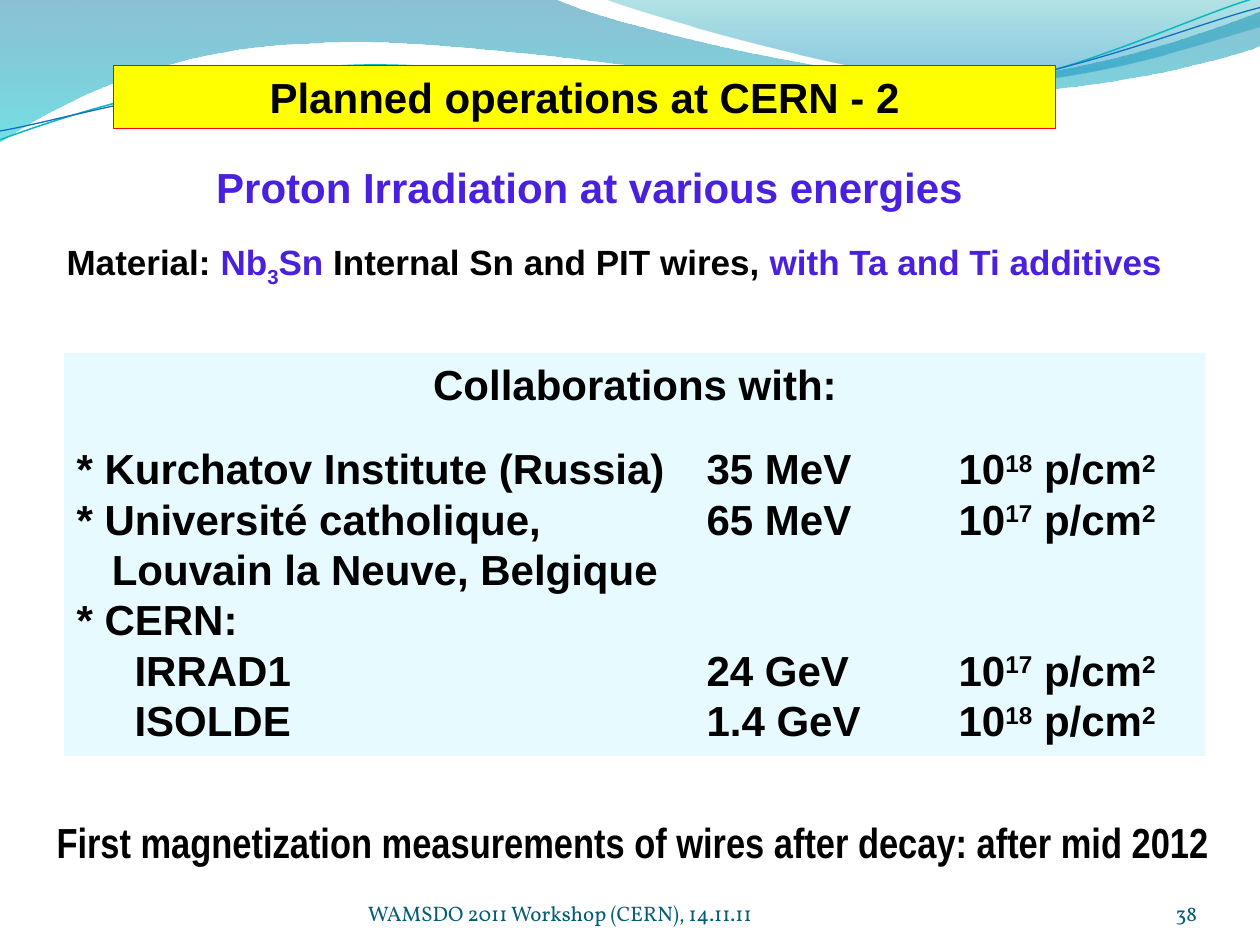
from dataclasses import dataclass

from lxml import etree
from pptx import Presentation
from pptx.dml.color import RGBColor
from pptx.enum.shapes import MSO_SHAPE
from pptx.enum.text import MSO_ANCHOR, PP_ALIGN
from pptx.oxml.ns import qn
from pptx.util import Inches, Pt

RECT = MSO_SHAPE.RECTANGLE
LEFT, CENTER, RIGHT = PP_ALIGN.LEFT, PP_ALIGN.CENTER, PP_ALIGN.RIGHT
TOP, BOTTOM = MSO_ANCHOR.TOP, MSO_ANCHOR.BOTTOM


@dataclass(frozen=True)
class Theme:
    """Colours, fonts and type sizes of the slide."""
    ink: str = "000000"
    accent: str = "4920DE"
    footer: str = "045D75"
    banner: str = "FFFF00"
    border: str = "FF0000"
    panel: str = "E7FAFF"
    body_font: str = "Arial"
    narrow_font: str = "Arial Narrow"
    footer_font: str = "Vollkorn"
    large: float = 24
    medium: float = 20
    small: float = 12
    leading: float = 28.8
    gap: float = 19


T = Theme()
WAVES = [
    dict(start=(0, 0), close=True,
         parts=[(4.4, -0.01), (4.76, 0.17, 6.64, 0.63, 7.58, 0.63),
                (8.53, 0.63, 9.58, 0.26, 10, 0.09), (10.01, 0.36),
                (9.83, 0.44, 8.7, 0.76, 7.46, 0.75),
                (6.22, 0.75, 3.82, 0.28, 2.57, 0.34),
                (1.29, 0.36, 0.46, 0.83, -0.01, 1.13)],
         stops=[(0, "0074A1", 45), (1, "00C6CF", 55)]),
    dict(start=(4.79, -0.01), close=True,
         parts=[(5.09, 0.11, 6.82, 0.62, 7.69, 0.65),
                (8.56, 0.69, 9.61, 0.32, 10, 0.21), (10, 0)],
         stops=[(0, "00A1A9", 30), (0.8, "008BBF", 45)]),
    dict(start=(0, 1.11), close=False,
         parts=[(0.48, 0.93, 1.58, 0.57, 2.77, 0.52),
                (3.95, 0.47, 5.93, 0.89, 7.13, 0.8),
                (8.33, 0.71, 9.38, 0.15, 9.98, -0.02)],
         line=("0AB8BF", 0.85)),
    dict(start=(0, 1.04), close=False,
         parts=[(0.47, 0.96, 1.64, 0.61, 2.83, 0.56),
                (4.03, 0.51, 5.97, 0.84, 7.17, 0.75),
                (8.36, 0.67, 9.41, 0.21, 10, 0.06)],
         line=("0F6FC6", 0.75)),
]
ROWS = [
    (0, "* Kurchatov Institute (Russia)", "35 MeV", "18"),
    (0, "* Université catholique,", "65 MeV", "17"),
    (0.28, "Louvain la Neuve, Belgique", "", ""),
    (0, "* CERN:", "", ""),
    (0.46, "IRRAD1", "24 GeV", "17"),
    (0.46, "ISOLDE", "1.4 GeV", "18"),
]
COLUMNS = (5, 7)


def rgb(value):
    """Return the colour object for a hex string."""
    return RGBColor.from_string(value)


def bend(sp, parts):
    """Turn each run of three segments that stands for a curve into a Bézier."""
    segments = iter(list(sp._element.iter(qn("a:lnTo"))))
    for part in parts:
        first = next(segments)
        if len(part) == 2:
            continue
        curve = etree.Element(qn("a:cubicBezTo"))
        first.addprevious(curve)
        for segment in (first, next(segments), next(segments)):
            curve.append(segment[0])
            segment.getparent().remove(segment)


def add_wave(s, start, parts, close, stops=None, line=None):
    """Draw one filled wave or one thin wave line."""
    points = [(Inches(x), Inches(y)) for part in [start] + parts
              for x, y in zip(part[::2], part[1::2])]
    builder = s.shapes.build_freeform(*points[0])
    builder.add_line_segments(points[1:], close=close)
    sp = builder.convert_to_shape()
    bend(sp, parts)
    sp.shadow.inherit = False
    if line:
        sp.fill.background()
        sp.line.color.rgb = rgb(line[0])
        sp.line.width = Pt(line[1])
        return
    sp.line.fill.background()
    sp.fill.gradient()
    sp.fill.gradient_angle = 270
    for stop, (position, color, _) in zip(sp.fill.gradient_stops, stops):
        stop.position = position
        stop.color.rgb = rgb(color)
    for clr, (_, _, alpha) in zip(sp._element.spPr.iter(qn("a:srgbClr")), stops):
        etree.SubElement(clr, qn("a:alpha")).set("val", str(alpha * 1000))


def add_runs(p, runs, size=T.large, font=T.body_font, bold=True):
    """Append runs given as (text, colour, baseline percent)."""
    for text, color, base in runs:
        r = p.add_run()
        r.text = text
        for name, value in dict(size=Pt(size), name=font, bold=bold).items():
            setattr(r.font, name, value)
        r.font.color.rgb = rgb(color)
        if base:
            r.font._element.set("baseline", str(base * 1000))


def add_text(s, box, runs, align=LEFT, anchor=TOP, inset=True, **style):
    """Place a one-paragraph text box."""
    tf = s.shapes.add_textbox(*map(Inches, box)).text_frame
    frame = dict(word_wrap=True, vertical_anchor=anchor)
    if not inset:
        frame.update(dict.fromkeys(
            ("margin_left", "margin_right", "margin_top", "margin_bottom"), 0))
    for name, value in frame.items():
        setattr(tf, name, value)
    p = tf.paragraphs[0]
    p.alignment = align
    add_runs(p, runs, **style)


def add_panel(s, box, fill, line=None):
    """Draw a filled rectangle and return its text frame."""
    sp = s.shapes.add_shape(RECT, *map(Inches, box))
    sp.shadow.inherit = False
    sp.fill.solid()
    sp.fill.fore_color.rgb = rgb(fill)
    if line:
        sp.line.color.rgb = rgb(line)
        sp.line.width = Pt(0.75)
    else:
        sp.line.fill.background()
    sp.text_frame.word_wrap = True
    sp.text_frame.vertical_anchor = TOP
    return sp.text_frame


def add_banner(s, box, title):
    """Place the slide title in its coloured bar."""
    p = add_panel(s, box, T.banner, T.border).paragraphs[0]
    p.alignment = CENTER
    add_runs(p, [(title, T.ink, 0)])


def add_collaborations(s, box, heading, rows):
    """Place the list of partners with energy and fluence columns."""
    tf = add_panel(s, box, T.panel)
    p = tf.paragraphs[0]
    p.alignment = CENTER
    p.line_spacing = Pt(T.leading)
    p.space_after = Pt(T.gap)
    add_runs(p, [(heading, T.ink, 0)])
    for indent, name, energy, exponent in rows:
        p = tf.add_paragraph()
        p.alignment = LEFT
        p.line_spacing = Pt(T.leading)
        tabs = etree.SubElement(p._p.get_or_add_pPr(), qn("a:tabLst"))
        for stop in ((indent,) if indent else ()) + COLUMNS:
            tab = etree.SubElement(tabs, qn("a:tab"))
            tab.set("pos", str(Inches(stop)))
            tab.set("algn", "l")
        lead = "\t" + name if indent else name
        runs = [(lead, T.ink, 0)]
        if energy:
            runs = [(f"{lead}\t{energy}\t10", T.ink, 0), (exponent, T.ink, 30),
                    (" p/cm", T.ink, 0), ("2", T.ink, 30)]
        add_runs(p, runs)


def add_footer(s, box, text, align):
    """Place one footer item on the bottom line."""
    add_text(s, box, [(text, T.footer, 0)], align, BOTTOM, inset=False,
             size=T.small, font=T.footer_font, bold=False)


def main():
    """Build the slide and save it."""
    prs = Presentation()
    prs.slide_width, prs.slide_height = Inches(10), Inches(7.5)
    s = prs.slides.add_slide(prs.slide_layouts[6])
    for wave in WAVES:
        add_wave(s, **wave)
    add_banner(s, (0.9, 0.52, 7.48, 0.5), "Planned operations at CERN - 2")
    add_text(s, (0.98, 1.23, 7.4, 0.5),
             [("Proton Irradiation at various energies", T.accent, 0)], CENTER)
    add_text(s, (0.43, 1.86, 8.98, 0.44),
             [("Material: ", T.ink, 0), ("Nb", T.accent, 0), ("3", T.accent, -25),
              ("Sn ", T.accent, 0), ("Internal Sn and PIT wires, ", T.ink, 0),
              ("with Ta and Ti additives", T.accent, 0)], size=T.medium)
    add_collaborations(s, (0.51, 2.8, 9.06, 3.2), "Collaborations with:", ROWS)
    add_text(s, (0.35, 6.43, 9.45, 0.5),
             [("First magnetization measurements of wires after decay: "
               "after mid 2012", T.ink, 0)], font=T.narrow_font)
    add_footer(s, (2.92, 6.95, 3.67, 0.4),
               "WAMSDO 2011 Workshop (CERN), 14.11.11", LEFT)
    add_footer(s, (8.67, 6.95, 0.83, 0.4), "38", RIGHT)
    prs.save("out.pptx")


if __name__ == "__main__":
    main()
